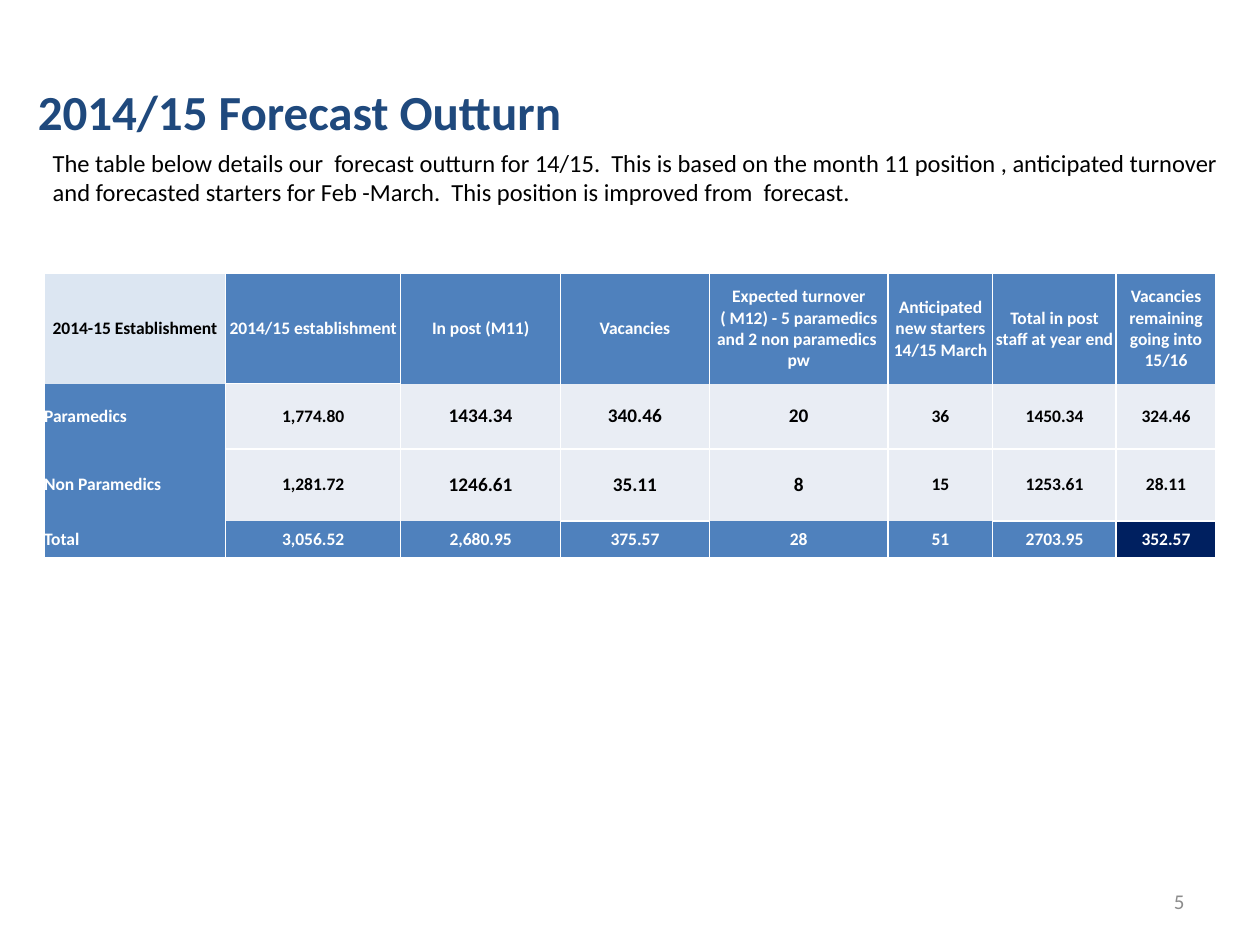
from lxml.etree import SubElement
from pptx import Presentation
from pptx.dml.color import RGBColor
from pptx.enum.text import MSO_ANCHOR, PP_ALIGN
from pptx.oxml.ns import qn
from pptx.util import Inches, Pt

SLIDE_WIDTH, SLIDE_HEIGHT = Inches(10), Inches(7.5)
COLORS = {
    "title": "1F497D", "number": "8C8C8C", "black": "000000", "white": "FFFFFF",
    "corner": "DCE6F2", "accent": "4F81BD", "body": "E9EDF4", "result": "002060",
}
COLUMN_WEIGHTS = [1.44, 1.39, 1.27, 1.18, 1.42, 0.83, 0.98, 0.79]
ROW_WEIGHTS = [0.87, 0.52, 0.57, 0.29]
LARGE_COLUMNS = {2, 3, 4}
RULES_ABOVE = {1: {1}, 2: set(range(1, 8)), 3: {3, 6, 7}}
ROWS = [
    ["2014-15 Establishment", "2014/15 establishment", "In post (M11)", "Vacancies",
     "Expected turnover ( M12) - 5 paramedics and 2 non paramedics  pw",
     "Anticipated new starters 14/15 March", "Total in post staff at year end",
     "Vacancies remaining going into 15/16"],
    ["Paramedics", "1,774.80", "1434.34", "340.46", "20", "36", "1450.34", "324.46"],
    ["Non Paramedics", "1,281.72", "1246.61", "35.11", "8", "15", "1253.61", "28.11"],
    ["Total", "3,056.52", "2,680.95", "375.57", "28", "51", "2703.95", "352.57"],
]
INTRODUCTION = (
    "The table below details our  forecast outturn for 14/15.  This is based on the "
    "month 11 position , anticipated turnover and forecasted starters for Feb -March.  "
    "This position is improved from  forecast."
)


def share_box(left, top, width, height):
    """Turn shares of the slide into a box in slide units."""
    return (int(left * SLIDE_WIDTH), int(top * SLIDE_HEIGHT),
            int(width * SLIDE_WIDTH), int(height * SLIDE_HEIGHT))


def write_text(frame, text, size, color, bold=False, align=PP_ALIGN.LEFT):
    """Write one formatted paragraph into a text frame."""
    paragraph = frame.paragraphs[0]
    paragraph.alignment = align
    run = paragraph.add_run()
    run.text = text
    run.font.name = "Calibri"
    run.font.size = Pt(size)
    run.font.bold = bold
    run.font.color.rgb = RGBColor.from_string(COLORS[color])


def add_title(slide, box, text):
    """Place and format the title placeholder."""
    title = slide.shapes.title
    title.left, title.top, title.width, title.height = box
    title.text_frame.vertical_anchor = MSO_ANCHOR.MIDDLE
    write_text(title.text_frame, text, 28, "title", bold=True)


def add_text(slide, box, text, anchor=MSO_ANCHOR.TOP, **text_format):
    """Add a wrapping text box."""
    frame = slide.shapes.add_textbox(*box).text_frame
    frame.word_wrap = True
    frame.vertical_anchor = anchor
    write_text(frame, text, **text_format)


def set_borders(cell, row, column):
    """Draw white column rules and the chosen row rules of a cell."""
    visible = {
        "lnL": True, "lnR": True,
        "lnT": column in RULES_ABOVE.get(row, ()),
        "lnB": column in RULES_ABOVE.get(row + 1, ()),
    }
    properties = cell._tc.get_or_add_tcPr()
    for position, (tag, shown) in enumerate(visible.items()):
        line = SubElement(properties, qn(f"a:{tag}"), w=str(Pt(1)))
        properties.insert(position, line)
        if shown:
            fill = SubElement(line, qn("a:solidFill"))
            SubElement(fill, qn("a:srgbClr"), val=COLORS["white"])
        else:
            SubElement(line, qn("a:noFill"))


def cell_style(row, column):
    """Choose the fill, text colour and text size for a table position."""
    if (row, column) == (0, 0):
        return "corner", "black", 10
    if (row, column) == (len(ROWS) - 1, len(COLUMN_WEIGHTS) - 1):
        return "result", "white", 10
    if column and row in (1, 2):
        return "body", "black", 11 if column in LARGE_COLUMNS else 10
    return "accent", "white", 10


def format_cell(cell, text, row, column):
    """Fill, frame and label one table cell."""
    fill, color, size = cell_style(row, column)
    cell.margin_left = cell.margin_right = cell.margin_top = cell.margin_bottom = 0
    cell.vertical_anchor = MSO_ANCHOR.MIDDLE
    cell.fill.solid()
    cell.fill.fore_color.rgb = RGBColor.from_string(COLORS[fill])
    align = PP_ALIGN.LEFT if row and not column else PP_ALIGN.CENTER
    write_text(cell.text_frame, text, size, color, bold=True, align=align)
    set_borders(cell, row, column)


def add_forecast_table(slide, box):
    """Add the establishment table, sharing its box among columns and rows."""
    width, height = box[2:]
    table = slide.shapes.add_table(len(ROWS), len(COLUMN_WEIGHTS), *box).table
    table.first_row = table.horz_banding = False
    for column, weight in zip(table.columns, COLUMN_WEIGHTS):
        column.width = int(width * weight / sum(COLUMN_WEIGHTS))
    for row, weight in zip(table.rows, ROW_WEIGHTS):
        row.height = int(height * weight / sum(ROW_WEIGHTS))
    for row, texts in enumerate(ROWS):
        for column, text in enumerate(texts):
            format_cell(table.cell(row, column), text, row, column)


def main():
    """Build and save the forecast slide."""
    presentation = Presentation()
    presentation.slide_width, presentation.slide_height = SLIDE_WIDTH, SLIDE_HEIGHT
    slide = presentation.slides.add_slide(presentation.slide_layouts[5])
    add_title(slide, share_box(0.02, 0.06, 0.86, 0.115), "2014/15 Forecast Outturn")
    add_text(slide, share_box(0.032, 0.15, 0.97, 0.076), INTRODUCTION,
             size=14, color="black")
    add_forecast_table(slide, share_box(0.035, 0.29, 0.93, 0.3))
    add_text(slide, share_box(0.717, 0.927, 0.233, 0.053), "5",
             anchor=MSO_ANCHOR.MIDDLE, size=12, color="number", align=PP_ALIGN.RIGHT)
    presentation.save("out.pptx")


if __name__ == "__main__":
    main()
